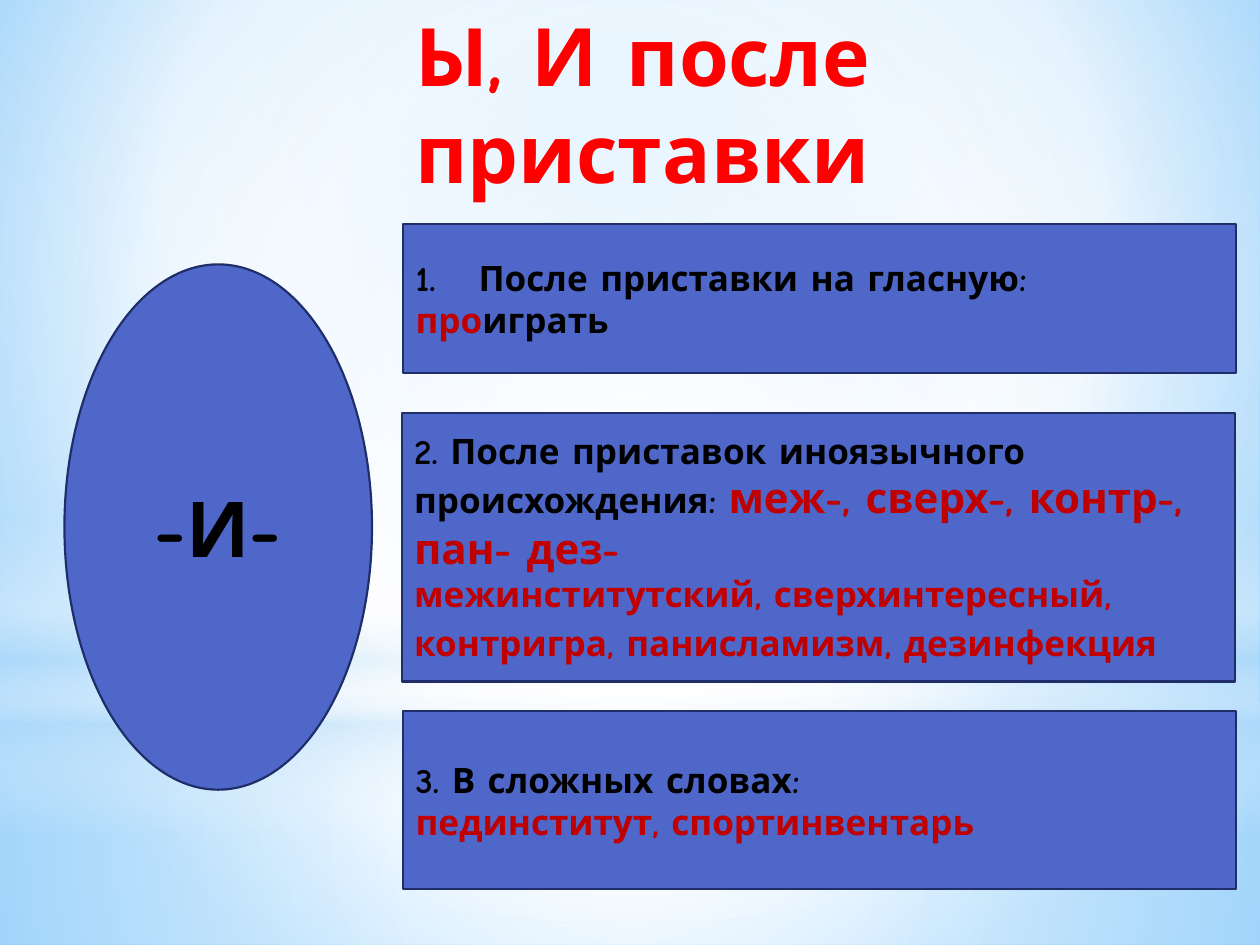
import pptx
import pptx.util
import pptx.dml.color
import pptx.enum.shapes
import pptx.enum.text
import pptx.oxml
import pptx.oxml.ns

Cm, Pt = pptx.util.Cm, pptx.util.Pt
RGBColor = pptx.dml.color.RGBColor
SHAPE = pptx.enum.shapes.MSO_SHAPE
ALIGN = pptx.enum.text.PP_ALIGN
ANCHOR = pptx.enum.text.MSO_ANCHOR
qn = pptx.oxml.ns.qn

COLORS = {
    "title": "FF0000", "text": "000000", "accent": "C00000",
    "fill": "4E67C8", "line": "1F2E69",
    "white": "FFFFFF", "haze": "B4DCFA", "sky": "9ED5FF", "edge": "5BB9FF",
}
FONT = "Comic Neue"


def set_gradient(fill, owner, stops, focus=None):
    """Stops are (position, colour, opacity) in percent; focus is l, t, r, b of a
    circular gradient, and without it the gradient runs downwards."""
    fill.gradient()
    gradient = next(owner.iter(qn("a:gradFill")))
    for child in list(gradient):
        gradient.remove(child)
    stop_xml = "".join(
        f'<a:gs pos="{position * 1000}"><a:srgbClr val="{COLORS[color]}">'
        f'<a:alpha val="{opacity * 1000}"/></a:srgbClr></a:gs>'
        for position, color, opacity in stops)
    if focus:
        sides = " ".join(f'{side}="{value * 1000}"' for side, value in zip("ltrb", focus))
        course = f'<a:path path="circle"><a:fillToRect {sides}/></a:path>'
    else:
        course = '<a:lin ang="5400000" scaled="0"/>'
    namespace = pptx.oxml.ns.nsdecls("a")
    source = pptx.oxml.parse_xml(
        f"<a:gradFill {namespace}><a:gsLst>{stop_xml}</a:gsLst>{course}</a:gradFill>")
    for child in list(source):
        gradient.append(child)


def write_paragraphs(frame, paragraphs, align):
    """Each paragraph is a list of (text, size, colour) runs."""
    frame.word_wrap = True
    for index, runs in enumerate(paragraphs):
        para = frame.paragraphs[0] if index == 0 else frame.add_paragraph()
        para.alignment = align
        for text, size, color in runs:
            span = para.add_run()
            span.text = text
            span.font.name = FONT
            span.font.size = Pt(size)
            span.font.bold = True
            span.font.color.rgb = RGBColor.from_string(COLORS[color])


deck = pptx.Presentation()
deck.slide_width, deck.slide_height = Cm(25.4), Cm(19.05)
page = deck.slides.add_slide(deck.slide_layouts[6])

# Sky background with layers of haze
set_gradient(page.background.fill, page._element,
             [(0, "sky", 100), (60, "white", 100), (100, "edge", 100)], (20, 10, 20, 60))
centre = (50, 50, 50, 50)
layers = [
    (SHAPE.RECTANGLE, 14.17, 4.88,
     [(0, "white", 91), (37, "white", 76), (100, "haze", 79)], centre),
    (SHAPE.RECTANGLE, 0, 14.17,
     [(0, "white", 89), (48, "white", 62), (100, "haze", 79)], centre),
    (SHAPE.RECTANGLE, 10.46, 6.35,
     [(0, "white", 0), (29, "white", 30), (45, "haze", 40),
      (55, "white", 26), (65, "haze", 60), (100, "white", 0)], None),
    (SHAPE.OVAL, 4.45, 14.17, [(0, "white", 100), (56, "white", 0)], centre),
]
for kind, top, height, stops, focus in layers:
    layer = page.shapes.add_shape(kind, 0, Cm(top), deck.slide_width, Cm(height))
    layer.shadow.inherit = False
    layer.line.fill.background()
    set_gradient(layer.fill, layer._element, stops, focus)

# Title
title = page.shapes.add_textbox(Cm(3.91), 0, Cm(18.08), Cm(3.18))
write_paragraphs(title.text_frame, [[("Ы, И после приставки", 46, "title")]], ALIGN.CENTER)

# The letter and its three rules
cards = [
    (SHAPE.OVAL, 1.3, 5.33, 6.2, 10.59, ALIGN.CENTER, [[("-И-", 44, "text")]]),
    (SHAPE.RECTANGLE, 8.13, 4.52, 16.79, 3, ALIGN.LEFT, [
        [("После приставки на гласную:", 20, "text")],
        [("про", 20, "accent"), ("играть", 20, "text")]]),
    (SHAPE.RECTANGLE, 8.1, 8.33, 16.79, 5.41, ALIGN.LEFT, [
        [("2. После приставок иноязычного происхождения: ", 20, "text"),
         ("меж-, сверх-, контр-, пан- дез-", 24, "accent")],
        [("межинститутский, сверхинтересный, контригра, панисламизм, дезинфекция ",
          20, "accent"), (" ", 24, "accent")]]),
    (SHAPE.RECTANGLE, 8.13, 14.33, 16.79, 3.6, ALIGN.LEFT, [
        [("3. В сложных словах:", 20, "text")],
        [("пединститут, спортинвентарь", 20, "accent")]]),
]
boxes = []
for kind, left, top, width, height, align, paragraphs in cards:
    box = page.shapes.add_shape(kind, Cm(left), Cm(top), Cm(width), Cm(height))
    box.shadow.inherit = False
    box.fill.solid()
    box.fill.fore_color.rgb = RGBColor.from_string(COLORS["fill"])
    box.line.color.rgb = RGBColor.from_string(COLORS["line"])
    box.line.width = Pt(1.25)
    box.text_frame.vertical_anchor = ANCHOR.MIDDLE
    write_paragraphs(box.text_frame, paragraphs, align)
    boxes.append(box)

# Automatic number on the first rule
numbered = boxes[1].text_frame.paragraphs[0]._p.get_or_add_pPr()
numbered.set("marL", str(Cm(1.27)))
numbered.set("indent", str(-Cm(1.27)))
numbered.append(pptx.oxml.parse_xml(
    f'<a:buAutoNum {pptx.oxml.ns.nsdecls("a")} type="arabicPeriod"/>'))

deck.save("out.pptx")
